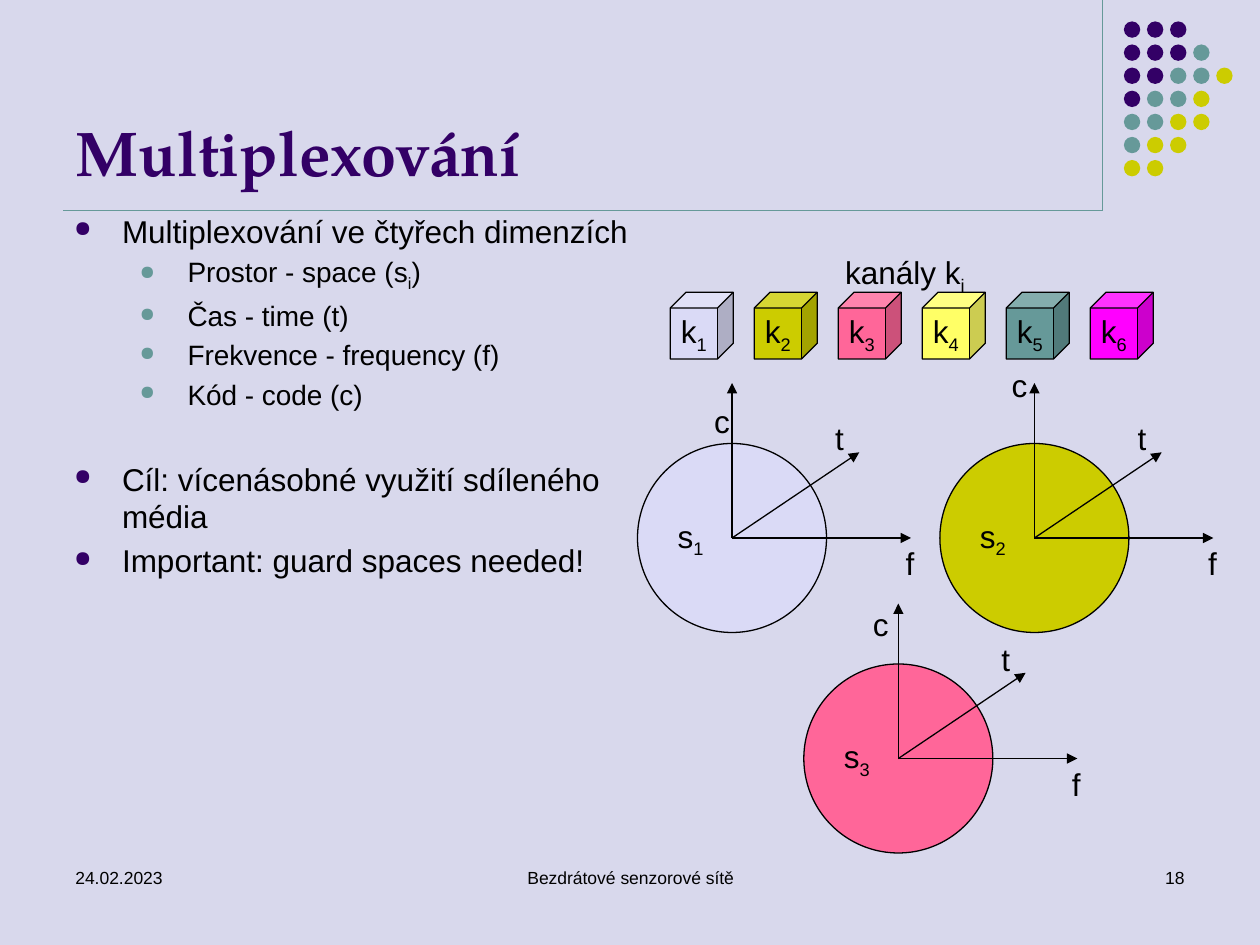
from dataclasses import dataclass

import pptx
import pptx.dml.color
import pptx.enum.shapes
import pptx.enum.text
import pptx.oxml.ns
import pptx.util
from lxml import etree

Inches = pptx.util.Inches
Pt = pptx.util.Pt
Align = pptx.enum.text.PP_ALIGN
Anchor = pptx.enum.text.MSO_ANCHOR
AutoSize = pptx.enum.text.MSO_AUTO_SIZE
Preset = pptx.enum.shapes.MSO_SHAPE
qn = pptx.oxml.ns.qn


@dataclass(frozen=True)
class Theme:
    background: str = "D8D8EC"
    ink: str = "000000"
    purple: str = "330066"
    teal: str = "669999"
    olive: str = "CCCC00"
    lavender: str = "DADAF6"
    pink: str = "FF6699"
    yellow: str = "FFFF66"
    magenta: str = "FF00FF"
    body_font: str = "Arial"
    title_font: str = "TeX Gyre Pagella"
    title_size: int = 36
    text_size: int = 18
    sub_size: int = 16
    footer_size: int = 10
    line_width: float = 0.75


def rgb(color):
    return pptx.dml.color.RGBColor.from_string(color)


class SlideBuilder:
    def __init__(self, slide, theme):
        self.slide = slide
        self.theme = theme
        slide.background.fill.solid()
        slide.background.fill.fore_color.rgb = rgb(theme.background)

    def style(self, paragraph, size, color=None, name=None, bold=False):
        font = paragraph.font
        font.size = Pt(size)
        font.name = name or self.theme.body_font
        font.bold = bold
        font.color.rgb = rgb(color or self.theme.ink)

    def fill_paragraph(self, paragraph, pieces, size=None, align=Align.LEFT):
        for index, piece in enumerate(pieces):
            run = paragraph.add_run()
            run.text = piece
            if index % 2:
                run.font._element.set("baseline", "-25000")
        paragraph.alignment = align
        self.style(paragraph, size or self.theme.text_size)

    def title(self, text, left, top, width, height):
        shape = self.slide.shapes.title
        shape.left, shape.top = Inches(left), Inches(top)
        shape.width, shape.height = Inches(width), Inches(height)
        frame = shape.text_frame
        frame.text = text
        frame.auto_size = AutoSize.NONE
        frame.vertical_anchor = Anchor.BOTTOM
        paragraph = frame.paragraphs[0]
        paragraph.alignment = Align.LEFT
        self.style(paragraph, self.theme.title_size, self.theme.purple,
                   self.theme.title_font, True)

    def text_box(self, left, top, width, height, wrap=True):
        frame = self.slide.shapes.add_textbox(
            Inches(left), Inches(top), Inches(width), Inches(height)).text_frame
        frame.word_wrap = wrap
        frame.auto_size = AutoSize.NONE if wrap else AutoSize.SHAPE_TO_FIT_TEXT
        return frame

    def label(self, pieces, left, top, width, height=0.37):
        frame = self.text_box(left, top, width, height, wrap=False)
        self.fill_paragraph(frame.paragraphs[0], pieces)

    def footer(self, text, left, width, align):
        frame = self.text_box(left, 6.83, width, 0.5)
        self.fill_paragraph(frame.paragraphs[0], [text], self.theme.footer_size, align)

    def bullets(self, items, left, top, width, height):
        frame = self.text_box(left, top, width, height)
        for index, (level, gap, pieces) in enumerate(items):
            paragraph = frame.add_paragraph() if index else frame.paragraphs[0]
            size = self.theme.sub_size if level else self.theme.text_size
            paragraph.level = level
            properties = paragraph._p.get_or_add_pPr()
            properties.set("marL", str(Inches(0.9 if level else 0.38)))
            properties.set("indent", str(Inches(-0.38)))
            color = etree.SubElement(properties, qn("a:buClr"))
            etree.SubElement(color, qn("a:srgbClr")).set(
                "val", self.theme.teal if level else self.theme.purple)
            etree.SubElement(properties, qn("a:buSzPct")).set("val", "70000")
            etree.SubElement(properties, qn("a:buChar")).set("char", "●")
            paragraph.space_before = Pt(0.2 * size + gap)
            self.fill_paragraph(paragraph, pieces, size)

    def shape(self, preset, left, top, width, height, fill,
              pieces=(), align=Align.LEFT, outlined=True):
        shape = self.slide.shapes.add_shape(
            preset, Inches(left), Inches(top), Inches(width), Inches(height))
        shape.shadow.inherit = False
        shape.fill.solid()
        shape.fill.fore_color.rgb = rgb(fill)
        if outlined:
            shape.line.color.rgb = rgb(self.theme.ink)
            shape.line.width = Pt(self.theme.line_width)
        else:
            shape.line.fill.background()
        if pieces:
            shape.text_frame.word_wrap = False
            shape.text_frame.vertical_anchor = Anchor.MIDDLE
            self.fill_paragraph(shape.text_frame.paragraphs[0], pieces, align=align)

    def line(self, start, end, color, arrow=False):
        connector = self.slide.shapes.add_connector(
            pptx.enum.shapes.MSO_CONNECTOR.STRAIGHT,
            *(Inches(value) for value in (*start, *end)))
        connector.line.color.rgb = rgb(color)
        connector.line.width = Pt(self.theme.line_width)
        if arrow:
            etree.SubElement(connector.line._get_or_add_ln(),
                             qn("a:tailEnd")).set("type", "triangle")
        etree.SubElement(connector._element.spPr, qn("a:effectLst"))

    def dot_pattern(self, rows, left, top, pitch):
        colors = {"P": self.theme.purple, "T": self.theme.teal, "O": self.theme.olive}
        for row, codes in enumerate(rows):
            for column, code in enumerate(codes):
                self.shape(Preset.OVAL, left + column * pitch, top + row * pitch,
                           0.13, 0.13, colors[code], outlined=False)

    def space_diagram(self, number, x, y, fill, c_offset):
        radius = 0.75
        self.shape(Preset.OVAL, x - radius, y - radius, 2 * radius, 2 * radius,
                   fill, ["s", str(number)])
        axes = [("t", (1.01, -0.68), (0.72, -0.99), 0.26),
                ("c", (0, -1.23), c_offset, 0.31),
                ("f", (1.42, 0), (1.28, 0), 0.26)]
        for name, (dx, dy), (label_dx, label_dy), width in axes:
            self.line((x, y), (x + dx, y + dy), self.theme.ink, arrow=True)
            self.label([name], x + label_dx, y + label_dy, width)


def main():
    theme = Theme()
    presentation = pptx.Presentation()
    presentation.slide_width = Inches(10)
    presentation.slide_height = Inches(7.5)
    builder = SlideBuilder(
        presentation.slides.add_slide(presentation.slide_layouts[5]), theme)

    corner = (8.75, 1.67)
    builder.line((8.75, 0), corner, theme.teal)
    builder.line((0.5, 1.67), corner, theme.teal)
    builder.dot_pattern(["PPP", "PPPT", "PPTTO", "PTTO", "TTOO", "TOO", "OO"],
                        8.92, 0.17, 0.55 / 3)
    builder.title("Multiplexování", 0.5, 0.13, 8.25, 1.42)
    builder.bullets([
        (0, 0, ["Multiplexování ve čtyřech dimenzích"]),
        (1, 0, ["Prostor - space (s", "i", ")"]),
        (1, 0, ["Čas - time (t)"]),
        (1, 0, ["Frekvence - frequency (f)"]),
        (1, 0, ["Kód - code (c)"]),
        (0, 24.3, ["Cíl: vícenásobné využití sdíleného média"]),
        (0, 0, ["Important: guard spaces needed!"]),
    ], 0.49, 1.63, 5.05, 4.82)

    builder.label(["kanály k", "i"], 6.61, 1.96, 1.16, 0.4)
    channel_fills = [theme.lavender, theme.olive, theme.pink,
                     theme.yellow, theme.teal, theme.magenta]
    for index, fill in enumerate(channel_fills):
        builder.shape(Preset.CUBE, 5.32 + index * 2 / 3, 2.32, 0.5, 0.53, fill,
                      ["k", str(index + 1)], Align.CENTER)

    builder.space_diagram(1, 5.81, 4.27, theme.lavender, (-0.24, -1.13))
    builder.space_diagram(2, 8.21, 4.27, theme.olive, (-0.28, -1.41))
    builder.space_diagram(3, 7.13, 6.02, theme.pink, (-0.3, -1.27))

    builder.footer("24.02.2023", 0.5, 2.33, Align.LEFT)
    builder.footer("Bezdrátové senzorové sítě", 3.42, 3.17, Align.CENTER)
    builder.footer("18", 7.17, 2.33, Align.RIGHT)
    presentation.save("out.pptx")


if __name__ == "__main__":
    main()
